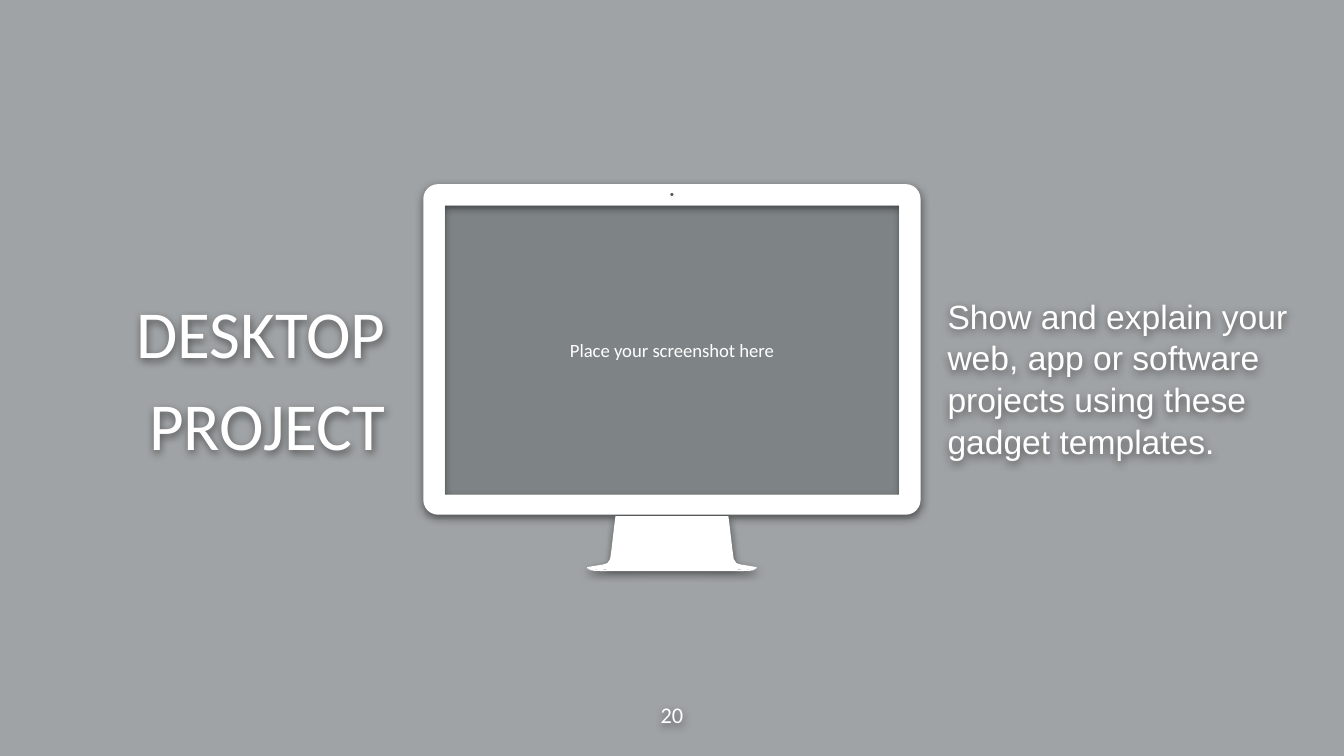
import math

import lxml.etree
import pptx
import pptx.dml.color
import pptx.enum.shapes
import pptx.enum.text
import pptx.oxml.ns
import pptx.util

COLORS = {"paper": "CACCCD", "shade": "040E11", "white": "FFFFFF", "shadow": "000000"}
WIDTH, HEIGHT = pptx.util.Inches(10), pptx.util.Inches(5.625)
UNIT = WIDTH / 1000
ALIGN = pptx.enum.text.PP_ALIGN
STAND = [(42, 247), (43, 255), (45, 272), (46, 279), (48, 282), (51, 283),
         (63, 285), (63, 286), (60, 286.5), (40, 287)]
FOOT = [(24, 287.3), (50, 287), (62, 286.6), (62, 287), (58, 287.7), (50, 288), (24, 288)]


def units(*values):
    """Turn grid columns or rows into whole lengths."""
    return [pptx.util.Emu(round(value * UNIT)) for value in values]


def paint(fill, name):
    """Make the fill a solid named colour."""
    fill.solid()
    fill.fore_color.rgb = pptx.dml.color.RGBColor.from_string(COLORS[name])


def add_shadow(shape):
    """Give the shape a soft shadow falling downwards."""
    effects = lxml.etree.SubElement(shape._element.spPr, pptx.oxml.ns.qn("a:effectLst"))
    effect = lxml.etree.SubElement(effects, pptx.oxml.ns.qn("a:outerShdw"), blurRad="57150",
                                   dist="19050", dir="5400000", algn="bl", rotWithShape="0")
    color = lxml.etree.SubElement(effect, pptx.oxml.ns.qn("a:srgbClr"), val=COLORS["shadow"])
    lxml.etree.SubElement(color, pptx.oxml.ns.qn("a:alpha"), val="50000")


def add_shade(page, box):
    """Lay a translucent dark rectangle over the box."""
    shape = page.shapes.add_shape(pptx.enum.shapes.MSO_SHAPE.RECTANGLE, *units(*box))
    shape.shadow.inherit = False
    shape.line.fill.background()
    paint(shape.fill, "shade")
    color = shape._element.spPr.find(".//" + pptx.oxml.ns.qn("a:srgbClr"))
    lxml.etree.SubElement(color, pptx.oxml.ns.qn("a:alpha"), val="21000")
    return shape


def write_text(shape, lines, size, font, align, inset=0, before=0, spacing=1.0):
    """Fill the shape with evenly styled, vertically centred lines."""
    frame = shape.text_frame
    frame.word_wrap = True
    frame.auto_size = pptx.enum.text.MSO_AUTO_SIZE.NONE
    frame.vertical_anchor = pptx.enum.text.MSO_ANCHOR.MIDDLE
    frame.margin_left = frame.margin_right = frame.margin_top = frame.margin_bottom = units(inset)[0]
    frame.text = "\n".join(lines)
    for para in frame.paragraphs:
        para.alignment = align
        para.space_before = pptx.util.Pt(before)
        para.line_spacing = spacing
        for font_format in (para.font, *(span.font for span in para.runs)):
            font_format.size = pptx.util.Pt(size)
            font_format.name = font
            paint(font_format.fill, "white")
        settings = para._p.get_or_add_pPr()
        settings.set("marL", "0")
        settings.set("indent", "0")
        bullet = lxml.etree.Element(pptx.oxml.ns.qn("a:buNone"))
        settings.find(pptx.oxml.ns.qn("a:defRPr")).addprevious(bullet)


def rounded(left, top, width, height, radius, steps=6):
    """List the outline points of a rounded rectangle."""
    centers = [(left + width - radius, top + height - radius), (left + radius, top + height - radius),
               (left + radius, top + radius), (left + width - radius, top + radius)]
    return [(x + radius * math.cos(turn), y + radius * math.sin(turn))
            for corner, (x, y) in enumerate(centers)
            for turn in (math.pi / 2 * (corner + step / steps) for step in range(steps + 1))]


def add_monitor(page, box):
    """Draw the desktop monitor with its screen in the box."""
    left, top, width, height = box
    middle = left + width / 2
    screen = (left + 16, top + 16, width - 32, height - 73)
    x, y, wide, high = screen
    contours = [rounded(left, top, width, height - 42, 11),
                [(x, y), (x + wide, y), (x + wide, y + high), (x, y + high)],
                rounded(middle - 1.2, top + 6.5, 2.4, 2.4, 1.2)]
    for profile in (STAND, FOOT):
        contours.append([(middle - across, top + down) for across, down in profile]
                        + [(middle + across, top + down) for across, down in reversed(profile)])
    builder = None
    for contour in contours:
        start, *rest = [units(*point) for point in contour]
        if builder is None:
            builder = page.shapes.build_freeform(*start)
        else:
            builder.move_to(*start)
        builder.add_line_segments(rest, close=True)
    body = builder.convert_to_shape()
    paint(body.fill, "white")
    body.line.fill.background()
    add_shadow(body)
    write_text(add_shade(page, screen), ["Place your screenshot here"], 10, "Calibri", ALIGN.CENTER, 10)


def add_caption(shape, box, lines, size, font, align, **style):
    """Move a text shape to the box and write its shadowed lines."""
    shape.left, shape.top, shape.width, shape.height = units(*box)
    write_text(shape, lines, size, font, align, **style)
    add_shadow(shape)


def main():
    """Build and save the desktop project page."""
    deck = pptx.Presentation()
    deck.slide_width, deck.slide_height = WIDTH, HEIGHT
    page = deck.slides.add_slide(deck.slide_layouts[1])
    paint(page.background.fill, "paper")
    title, body = page.placeholders
    add_shade(page, (0, 0, 1000, HEIGHT / UNIT))
    add_monitor(page, (315, 137, 370, 288))
    number_box = (470, 502, 60, 60)
    number = page.shapes.add_textbox(*units(*number_box))
    add_caption(number, number_box, ["20"], 12, "Calibri", ALIGN.CENTER)
    add_caption(title, (25, 193, 262, 176), ["DESKTOP", "PROJECT"], 36, "Calibri", ALIGN.RIGHT, before=6)
    add_caption(body, (705, 193, 262, 176),
                ["Show and explain your web, app or software projects using these gadget templates."],
                18, "Arial", ALIGN.LEFT, before=6, spacing=1.04)
    for shape in (title, body):
        page.shapes._spTree.append(shape._element)
    deck.save("out.pptx")


if __name__ == "__main__":
    main()
